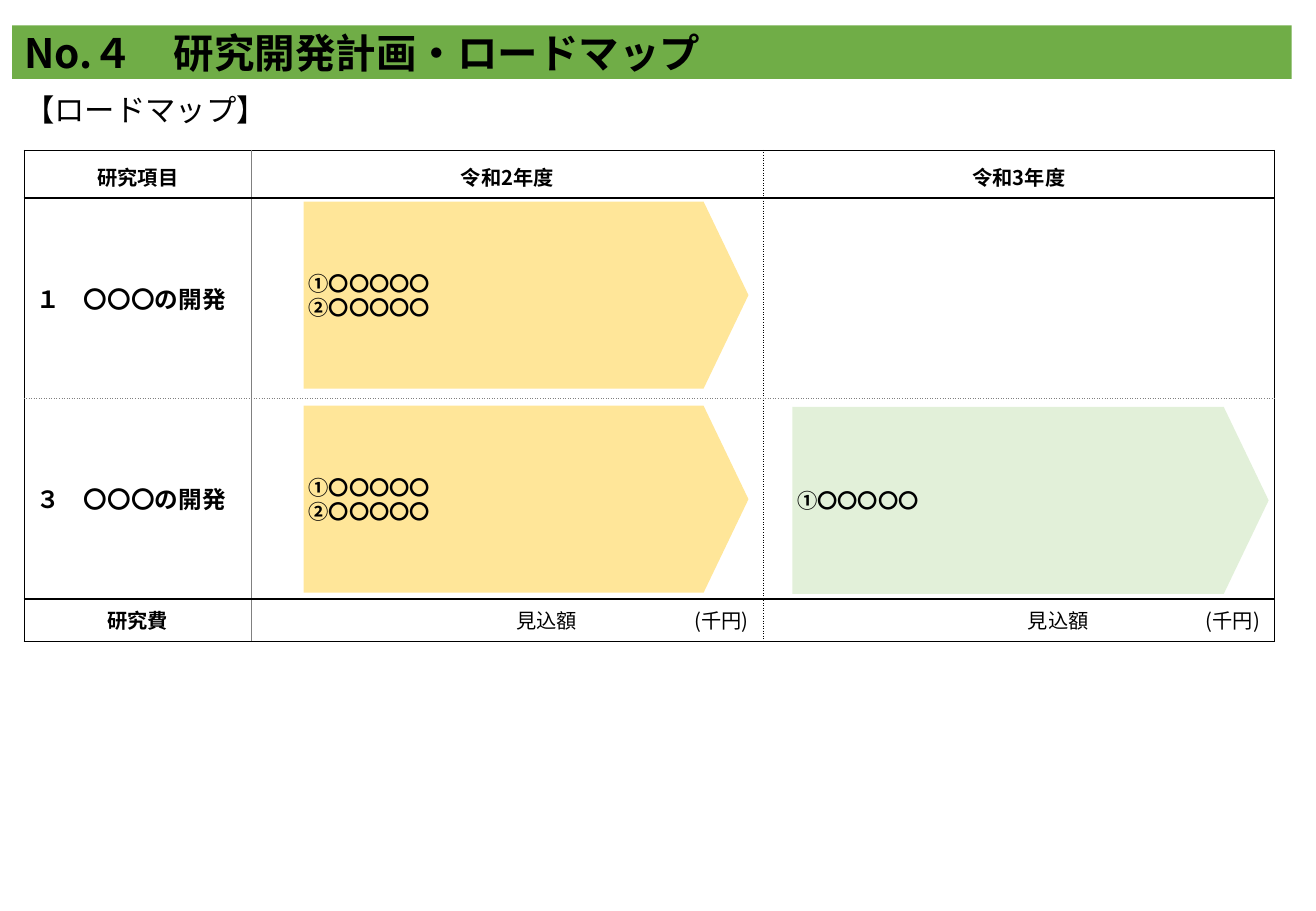
"""Build a research and development roadmap slide."""
from dataclasses import dataclass

from lxml.etree import SubElement
from pptx import Presentation
from pptx.dml.color import RGBColor
from pptx.enum.shapes import MSO_SHAPE
from pptx.enum.text import MSO_ANCHOR, MSO_AUTO_SIZE, PP_ALIGN
from pptx.oxml import parse_xml
from pptx.oxml.ns import nsdecls, qn
from pptx.util import Inches, Pt


@dataclass(frozen=True)
class Theme:
    """Colours, font and type sizes of the slide."""
    font: str = "Noto Sans CJK JP"
    ink: str = "000000"
    rule: str = "808080"
    banner: str = "70AD47"
    first_year: str = "FFE699"
    second_year: str = "E2F0D9"
    title: int = 24
    heading: int = 18
    item: int = 14
    body: int = 12


THEME = Theme()
GRID_LEFT, GRID_TOP = 0.2, 1.24
COLUMNS = [1.87, 4.21, 4.21]
ROWS = [0.39, 1.65, 1.65, 0.35]
MARGIN = 0.1
COST_TABS = [(2.08, "l"), (3.99, "r")]
COST = "\t見込額\t(千円)"
CONTENT = [
    ["研究項目", "令和2年度", "令和3年度"],
    ["１\u3000〇〇〇の開発".replace("\u3000", "　"), "", ""],
    ["３　〇〇〇の開発", "", ""],
    ["研究費", COST, COST],
]
SOLID = (THEME.ink, 1, "solid")
GREY = (THEME.rule, 1, "solid")
YEAR_EDGE = (THEME.ink, 0.75, "dot")
ITEM_EDGE = (THEME.rule, 1, "sysDot")
COLUMN_EDGES = [SOLID, GREY, YEAR_EDGE, SOLID]
ROW_EDGES = [SOLID, SOLID, ITEM_EDGE, SOLID, SOLID]


def write(frame, text, size, bold=False, align=PP_ALIGN.LEFT):
    """Fill a text frame with evenly styled paragraphs."""
    frame.text = text
    for paragraph in frame.paragraphs:
        paragraph.alignment = align
        font = paragraph.font
        font.name, font.size, font.bold = THEME.font, Pt(size), bold
        font.color.rgb = RGBColor.from_string(THEME.ink)
        SubElement(font._rPr, qn("a:ea"), typeface=THEME.font)


def paint(shape, colour):
    """Give a shape a plain fill."""
    shape.fill.solid()
    shape.fill.fore_color.rgb = RGBColor.from_string(colour)


def add_title(slide, text):
    """Place the title as a coloured banner."""
    title = slide.shapes.title
    title.left, title.top = Inches(0.1), Inches(0.21)
    title.width, title.height = Inches(10.53), Inches(0.44)
    paint(title, THEME.banner)
    write(title.text_frame, text, THEME.title, bold=True)
    title.text_frame.auto_size = MSO_AUTO_SIZE.NONE
    title.text_frame.vertical_anchor = MSO_ANCHOR.MIDDLE


def add_heading(slide, text):
    """Place the heading below the banner."""
    heading = slide.shapes.add_textbox(
        Inches(0.1), Inches(0.7), Inches(6.74), Inches(0.4))
    heading.text_frame.word_wrap = True
    write(heading.text_frame, text, THEME.heading)


def set_borders(cell, row, column):
    """Draw the four edges that surround a grid cell."""
    edges = {
        "lnL": COLUMN_EDGES[column], "lnR": COLUMN_EDGES[column + 1],
        "lnT": ROW_EDGES[row], "lnB": ROW_EDGES[row + 1],
    }
    properties = cell._tc.get_or_add_tcPr()
    for index, (side, (colour, width, dash)) in enumerate(edges.items()):
        properties.insert(index, parse_xml(
            f'<a:{side} {nsdecls("a")} w="{Pt(width)}"><a:solidFill>'
            f'<a:srgbClr val="{colour}"/></a:solidFill>'
            f'<a:prstDash val="{dash}"/></a:{side}>'))


def set_tabs(paragraph):
    """Set the tab stops of a cost entry."""
    stops = parse_xml(f'<a:tabLst {nsdecls("a")}/>')
    for position, align in COST_TABS:
        SubElement(stops, qn("a:tab"), pos=str(Inches(position)), algn=align)
    paragraph._p.get_or_add_pPr().insert(0, stops)


def fill_cell(cell, row, column):
    """Write and format one cell of the roadmap."""
    text = CONTENT[row][column]
    is_item = column == 0 and row in (1, 2)
    is_cost = text == COST
    cell.fill.background()
    cell.vertical_anchor = MSO_ANCHOR.MIDDLE
    cell.margin_left = cell.margin_right = Inches(MARGIN)
    cell.margin_top = Inches(0.08 if row == 0 else 0.05)
    cell.margin_bottom = Inches(0.04 if row == 0 else 0.05)
    write(cell.text_frame, text, THEME.item if is_item else THEME.body,
          bold=not is_cost,
          align=PP_ALIGN.LEFT if is_item or is_cost else PP_ALIGN.CENTER)
    if is_cost:
        set_tabs(cell.text_frame.paragraphs[0])
    set_borders(cell, row, column)


def add_roadmap(slide):
    """Add the table of research items by year."""
    table = slide.shapes.add_table(
        len(ROWS), len(COLUMNS), Inches(GRID_LEFT), Inches(GRID_TOP),
        Inches(sum(COLUMNS)), Inches(sum(ROWS))).table
    table.first_row = table.horz_banding = False
    for column, width in enumerate(COLUMNS):
        table.columns[column].width = Inches(width)
    for row, height in enumerate(ROWS):
        table.rows[row].height = Inches(height)
        for column in range(len(COLUMNS)):
            fill_cell(table.cell(row, column), row, column)


def add_task(slide, row, column, offset, width, colour, steps):
    """Add a task arrow, offset from the corner of its grid cell."""
    left = GRID_LEFT + sum(COLUMNS[:column]) + offset[0]
    top = GRID_TOP + sum(ROWS[:row]) + offset[1]
    task = slide.shapes.add_shape(
        MSO_SHAPE.PENTAGON, Inches(left), Inches(top),
        Inches(width), Inches(1.54))
    task.adjustments[0] = 0.24
    task.shadow.inherit = False
    task.line.fill.background()
    paint(task, colour)
    task.text_frame.margin_left = Inches(0.04)
    task.text_frame.vertical_anchor = MSO_ANCHOR.MIDDLE
    write(task.text_frame, steps, THEME.body, bold=True)


def main():
    """Build and save the slide."""
    deck = Presentation()
    deck.slide_width, deck.slide_height = Inches(10.83), Inches(7.5)
    slide = deck.slides.add_slide(deck.slide_layouts.get_by_name("Title Only"))
    add_title(slide, "No.４　研究開発計画・ロードマップ")
    add_heading(slide, "【ロードマップ】")
    add_roadmap(slide)
    both_steps = "①〇〇〇〇〇\n②〇〇〇〇〇"
    for row, drop in ((1, 0.03), (2, 0.06)):
        add_task(slide, row, 1, (0.43, drop), 3.66, THEME.first_year, both_steps)
    add_task(slide, 2, 2, (0.24, 0.07), 3.92, THEME.second_year, "①〇〇〇〇〇")
    deck.save("out.pptx")


if __name__ == "__main__":
    main()
